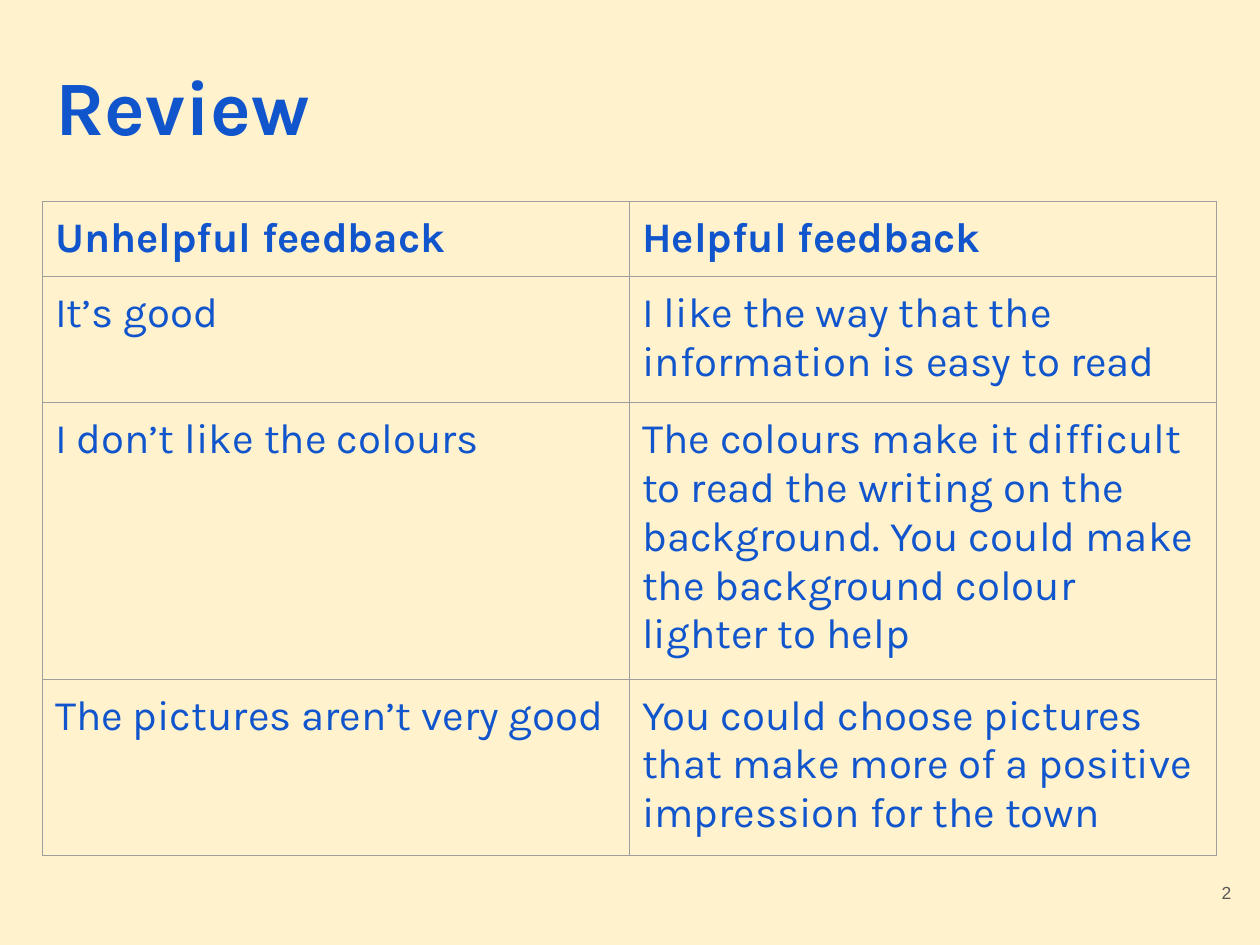
from dataclasses import dataclass

from lxml.etree import SubElement
from pptx import Presentation
from pptx.dml.color import RGBColor as RGB
from pptx.enum.text import MSO_ANCHOR as Anchor, PP_ALIGN as Align
from pptx.oxml.ns import qn
from pptx.util import Cm, Pt

TITLE = "Review"
PAGE_NUMBER = "2"
# Each row: unhelpful feedback, helpful feedback, lines of text in the taller cell
FEEDBACK = [
    ("Unhelpful feedback", "Helpful feedback", 1),
    ("It’s good", "I like the way that the information is easy to read", 2),
    ("I don’t like the colours",
     "The colours make it difficult to read the writing on the background. "
     "You could make the background colour lighter to help", 5),
    ("The pictures aren’t very good",
     "You could choose pictures that make more of a positive impression for the town", 3),
]


@dataclass(frozen=True)
class Theme:
    background: str = "FFF2CC"
    ink: str = "1155CC"
    muted: str = "595959"
    border: str = "9E9E9E"
    font: str = "Karla"
    number_font: str = "Arial"
    title_size: int = 44
    table_size: int = 24
    number_size: int = 10
    border_width: float = 0.75


THEME = Theme()
LEFT, CONTENT_WIDTH = 0.86, 23.67
TABLE_TOP = 4.06
LINE_HEIGHT, INSET = 0.99, 0.25


def write(frame, text, *, size, color=THEME.ink, font=THEME.font, bold=False, align=Align.LEFT):
    frame.word_wrap = True
    paragraph = frame.paragraphs[0]
    paragraph.alignment = align
    run = paragraph.add_run()
    run.text = text
    run.font.name, run.font.size, run.font.bold = font, Pt(size), bold
    run.font.color.rgb = RGB.from_string(color)


def add_text(slide, text, left, top, width, height, **text_format):
    frame = slide.shapes.add_textbox(Cm(left), Cm(top), Cm(width), Cm(height)).text_frame
    frame.margin_left = frame.margin_right = frame.margin_top = frame.margin_bottom = Cm(INSET)
    frame.vertical_anchor = Anchor.MIDDLE
    write(frame, text, **text_format)


def outline(cell):
    properties = cell._tc.get_or_add_tcPr()
    for side in ("lnL", "lnR", "lnT", "lnB"):
        line = SubElement(properties, qn(f"a:{side}"), w=str(Pt(THEME.border_width)))
        SubElement(SubElement(line, qn("a:solidFill")), qn("a:srgbClr"), val=THEME.border)


def add_feedback_table(slide):
    heights = [Cm(lines * LINE_HEIGHT + 2 * INSET) for *_, lines in FEEDBACK]
    table = slide.shapes.add_table(len(FEEDBACK), 2, Cm(LEFT), Cm(TABLE_TOP),
                                   Cm(CONTENT_WIDTH), sum(heights)).table
    table.first_row = table.horz_banding = False
    for row_index, (*comments, _) in enumerate(FEEDBACK):
        table.rows[row_index].height = heights[row_index]
        for column_index, comment in enumerate(comments):
            cell = table.cell(row_index, column_index)
            cell.margin_left = cell.margin_right = cell.margin_top = cell.margin_bottom = Cm(INSET)
            outline(cell)
            cell.fill.background()
            write(cell.text_frame, comment, size=THEME.table_size, bold=row_index == 0)


def main():
    deck = Presentation()
    deck.slide_width, deck.slide_height = Cm(25.4), Cm(19.05)
    slide = deck.slides.add_slide(deck.slide_layouts[6])
    slide.background.fill.solid()
    slide.background.fill.fore_color.rgb = RGB.from_string(THEME.background)

    add_text(slide, TITLE, LEFT, 0.81, CONTENT_WIDTH, 2.59, size=THEME.title_size, bold=True)
    add_text(slide, PAGE_NUMBER, 23.55, 17.27, 1.52, 1.45, size=THEME.number_size,
             color=THEME.muted, font=THEME.number_font, align=Align.RIGHT)
    add_feedback_table(slide)
    deck.save("out.pptx")


if __name__ == "__main__":
    main()
